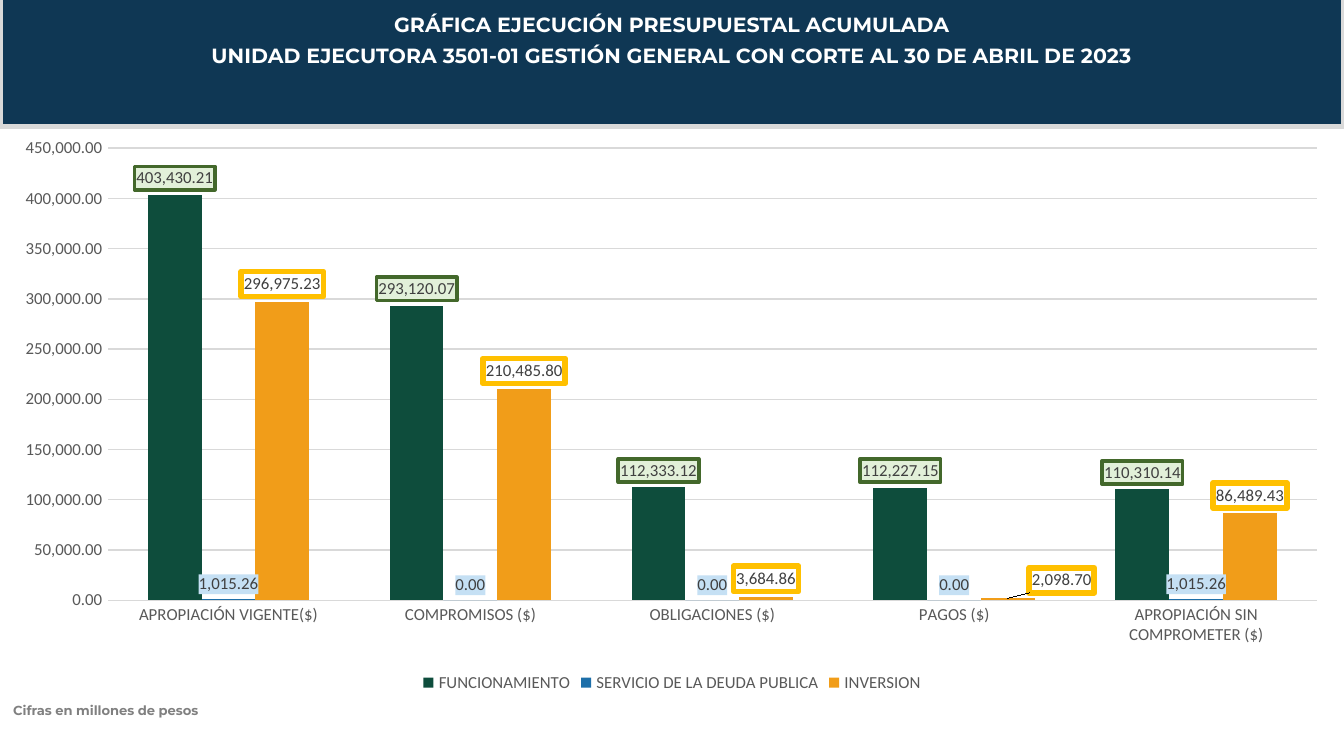
from copy import deepcopy
from lxml.etree import fromstring
from pptx import Presentation
from pptx.chart.data import CategoryChartData
from pptx.dml.color import RGBColor
from pptx.enum.chart import (XL_CHART_TYPE, XL_LABEL_POSITION,
                             XL_LEGEND_POSITION, XL_TICK_MARK)
from pptx.enum.text import MSO_ANCHOR, MSO_AUTO_SIZE, PP_ALIGN
from pptx.oxml.ns import nsdecls, qn
from pptx.util import Cm, Pt

HUES = {
    "navy": "0F3754", "grid": "D9D9D9", "white": "FFFFFF", "note": "808080",
    "axis": "595959", "label": "404040", "green": "0E4D3C", "blue": "1D6FA9",
    "orange": "F19D19", "mint": "E2F0D9", "moss": "43682B", "sky": "C5E0F4",
    "gold": "FFC000",
}
FORM = "#,##0.00"


def style(font, size, hue, name="Calibri", bold=False):
    font.size, font.name, font.bold = Pt(size), name, bold
    font.color.rgb = RGBColor.from_string(HUES[hue])


def layout(x, y, extra=""):
    return fromstring(f'<c:layout {nsdecls("c")}><c:manualLayout>{extra}'
                      f'<c:x val="{x}"/><c:y val="{y}"/>'
                      '</c:manualLayout></c:layout>')


deck = Presentation()
deck.slide_width, deck.slide_height = Cm(25.4), Cm(14.29)
slide = deck.slides.add_slide(deck.slide_layouts[5])

# Title band
title = slide.shapes.title
title.left, title.top, title.width, title.height = Cm(0), Cm(-1.37), Cm(25.4), Cm(3.76)
title.fill.solid()
title.fill.fore_color.rgb = RGBColor.from_string(HUES["navy"])
title.line.color.rgb = RGBColor.from_string(HUES["grid"])
title.line.width = Pt(3)
frame = title.text_frame
frame.text = ("GRÁFICA EJECUCIÓN PRESUPUESTAL ACUMULADA\n"
              "UNIDAD EJECUTORA 3501-01 GESTIÓN GENERAL CON CORTE AL 30 DE ABRIL DE 2023")
frame.auto_size = MSO_AUTO_SIZE.NONE
frame.vertical_anchor = MSO_ANCHOR.MIDDLE
frame.margin_left = frame.margin_right = frame.margin_bottom = 0
frame.margin_top = Cm(0.55)
for para in frame.paragraphs:
    para.alignment = PP_ALIGN.CENTER
    para.line_spacing, para.space_before = 0.9, Pt(4.5)
    style(para.runs[0].font, 11, "white", "Montserrat", True)

# Chart data
data = CategoryChartData(number_format=FORM)
data.categories = ["APROPIACIÓN VIGENTE($)", "COMPROMISOS ($)", "OBLIGACIONES ($)",
                   "PAGOS ($)", "APROPIACIÓN SIN COMPROMETER ($)"]
data.add_series("FUNCIONAMIENTO", [403430.21, 293120.07, 112333.12, 112227.15, 110310.14])
data.add_series("SERVICIO DE LA DEUDA PUBLICA", [1015.26, 0, 0, 0, 1015.26])
data.add_series("INVERSION", [296975.23, 210485.80, 3684.86, 2098.70, 86489.43])

# Chart with its plot area and legend
chart = slide.shapes.add_chart(XL_CHART_TYPE.COLUMN_CLUSTERED, Cm(0), Cm(2.37),
                               Cm(25.4), Cm(10.82), data).chart
style(chart.font, 10, "label")
chart.has_title = False
chart.has_legend = True
chart.legend.position = XL_LEGEND_POSITION.BOTTOM
chart.legend.include_in_layout = False
style(chart.legend.font, 9, "axis")
area = chart._chartSpace.find(".//" + qn("c:plotArea"))
for old in area.findall(qn("c:layout")):
    area.remove(old)
inner = layout(0.08, 0.04, '<c:layoutTarget val="inner"/>'
               '<c:xMode val="edge"/><c:yMode val="edge"/>')
for side, size in (("w", 0.9), ("h", 0.79)):
    inner[0].append(fromstring(f'<c:{side} {nsdecls("c")} val="{size}"/>'))
area.insert(0, inner)

# Axes
for axis in (chart.category_axis, chart.value_axis):
    axis.major_tick_mark = axis.minor_tick_mark = XL_TICK_MARK.NONE
    axis.format.line.fill.background()
    style(axis.tick_labels.font, 9, "axis")
scale = chart.value_axis
scale.minimum_scale, scale.maximum_scale, scale.major_unit = 0, 450000, 50000
scale.tick_labels.number_format = FORM
scale.tick_labels.number_format_is_linked = False
grid = scale.major_gridlines.format.line
grid.width = Pt(0.75)
grid.color.rgb = RGBColor.from_string(HUES["grid"])

# Columns and boxed labels: column, box fill, box line, line width
plot = chart.plots[0]
plot.gap_width, plot.overlap, plot.vary_by_categories = 150, 0, False
looks = [("green", "mint", "moss", 2), ("blue", "sky", None, 0),
         ("orange", "white", "gold", 3)]
for row, (hue, fill, edge, width) in zip(plot.series, looks):
    row.format.fill.solid()
    row.format.fill.fore_color.rgb = RGBColor.from_string(HUES[hue])
    row.invert_if_negative = False
    labels = row.data_labels
    labels.show_value = True
    labels.number_format, labels.number_format_is_linked = FORM, False
    labels.position = XL_LABEL_POSITION.OUTSIDE_END
    style(labels.font, 9, "label")
    paint = '<a:solidFill><a:srgbClr val="{}"/></a:solidFill>'
    line = paint.format(HUES[edge]) if edge else "<a:noFill/>"
    box = fromstring(f'<c:spPr {nsdecls("c", "a")}>{paint.format(HUES[fill])}'
                     f'<a:ln w="{Pt(width)}">{line}</a:ln></c:spPr>')
    labels._element.find(qn("c:numFmt")).addnext(box)

# Shift the last series' label for PAGOS to the right
group = labels._element
point = fromstring(f'<c:dLbl {nsdecls("c")}><c:idx val="3"/></c:dLbl>')
point.append(layout(0.04, 0))
for part in group:
    if part.tag != qn("c:showLeaderLines"):
        point.append(deepcopy(part))
group.insert(0, point)

# Footnote
note = slide.shapes.add_textbox(Cm(0), Cm(13.18), Cm(4.14), Cm(0.53)).text_frame
note.word_wrap = True
note.text = "Cifras en millones de pesos"
note.paragraphs[0].line_spacing = 0.9
note.paragraphs[0].space_before = Pt(8)
style(note.paragraphs[0].runs[0].font, 7, "note", "Montserrat", True)

deck.save("out.pptx")
